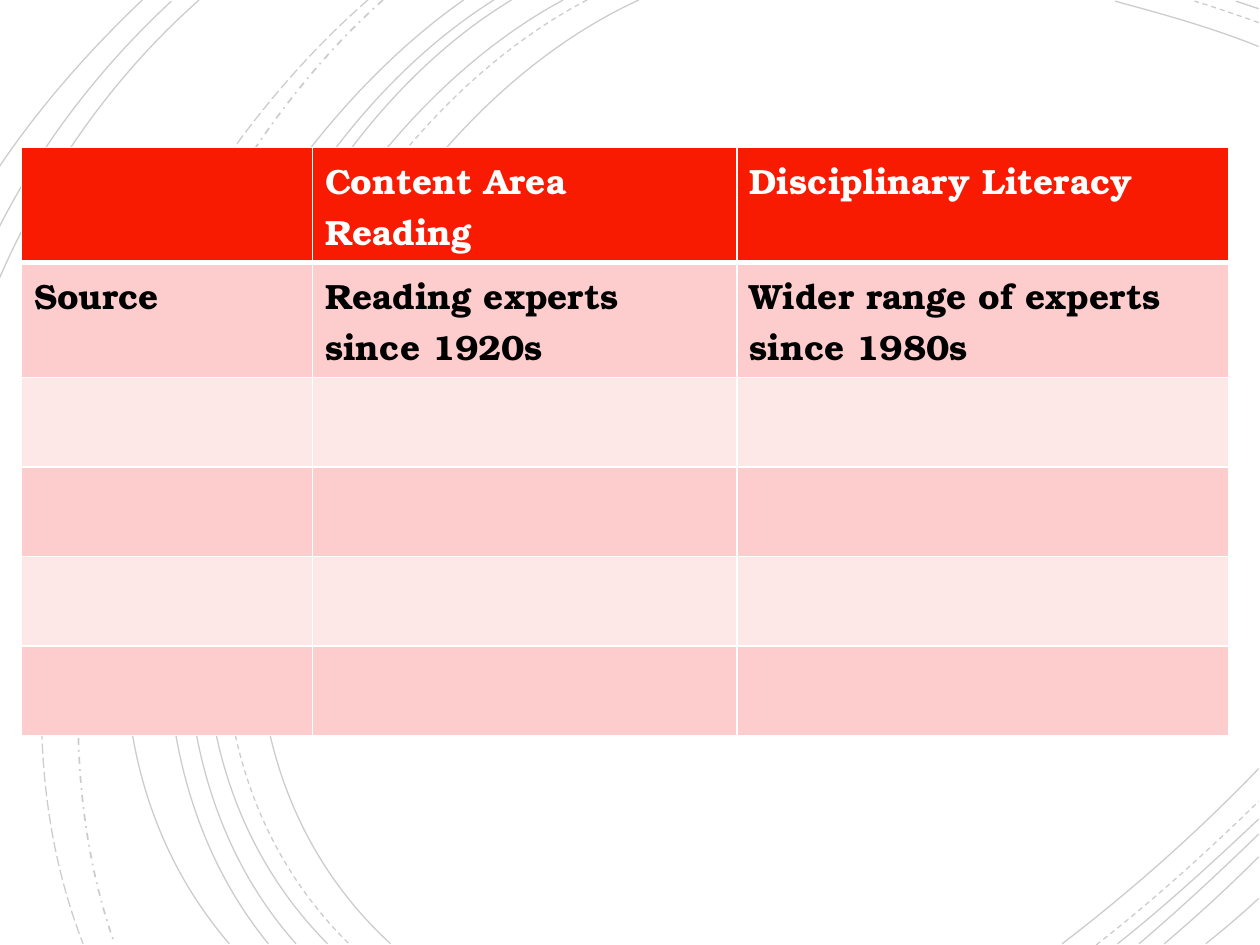
"""Build a literacy comparison table over a background of sweeping arcs."""
import lxml.etree
import pptx
import pptx.dml.color
import pptx.enum.dml
import pptx.oxml.ns
import pptx.util

THEME = {
    "font": "TeX Gyre Bonum", "size": 20,
    "header": "F81B02", "bands": ("FCCDCC", "FEE8E7"),
    "light": "FFFFFF", "dark": "000000",
    "arc_opacity": 20, "arc_width": 0.75, "border": 1, "header_border": 3,
}
SOLID = pptx.enum.dml.MSO_LINE.SOLID
DASH = pptx.enum.dml.MSO_LINE.DASH
DASH_DOT = pptx.enum.dml.MSO_LINE.DASH_DOT
LONG_DASH = pptx.enum.dml.MSO_LINE.LONG_DASH
ARCS = [
    (SOLID, (5.07, 0), (2.56, 1.15), (0.83, 5.4), (3.1, 7.49)),
    (SOLID, (9.99, 0.37), (9.62, 0.22), (9.22, 0.11), (8.85, 0.01)),
    (SOLID, (8.43, 7.49), (8.98, 7.07), (9.51, 6.6), (9.99, 6.1)),
    (DASH, (4.66, 0), (2.26, 1.25), (0.63, 5.38), (2.77, 7.49)),
    (DASH, (9.99, 0.18), (9.82, 0.12), (9.65, 0.06), (9.48, 0.01)),
    (DASH, (8.7, 7.5), (9.15, 7.15), (9.58, 6.76), (9.99, 6.36)),
    (SOLID, (4.47, 0), (2.11, 1.27), (0.5, 5.37), (2.6, 7.49)),
    (SOLID, (9.99, 0.07), (9.93, 0.05), (9.87, 0.03), (9.81, 0.01)),
    (SOLID, (8.87, 7.49), (9.26, 7.18), (9.63, 6.84), (9.99, 6.5)),
    (SOLID, (4.06, 0), (1.85, 1.33), (0.5, 5.41), (2.35, 7.49)),
    (SOLID, (9.04, 7.49), (9.37, 7.21), (9.68, 6.92), (9.99, 6.62)),
    (SOLID, (3.92, 0), (1.72, 1.38), (0.38, 5.34), (2.13, 7.49)),
    (SOLID, (9.24, 7.49), (9.5, 7.27), (9.75, 7.04), (9.99, 6.8)),
    (SOLID, (3.68, 0), (1.58, 1.47), (-0.07, 5.29), (1.82, 7.49)),
    (SOLID, (9.57, 7.49), (9.71, 7.38), (9.85, 7.26), (9.99, 7.13)),
    (DASH_DOT, (3.04, 0), (1.17, 1.66), (0.06, 5.09), (0.91, 7.49)),
    (LONG_DASH, (2.92, 0), (0.98, 1.69), (-0.31, 4.99), (0.66, 7.49)),
    (SOLID, (1.58, 0), (0.88, 0.62), (0.35, 1.39), (-0.01, 2.22)),
    (SOLID, (1.36, 0.01), (0.79, 0.54), (0.33, 1.14), (-0.01, 1.81)),
    (SOLID, (1.13, 0), (0.71, 0.4), (0.32, 0.84), (-0.01, 1.33)),
]
COLUMNS = (2.31, 3.37, 3.9)
ROW_COUNT, ROW_HEIGHT = 6, 0.71
WORDING = [
    ("", "Content Area Reading", "Disciplinary Literacy"),
    ("Source", "Reading experts since 1920s", "Wider range of experts since 1980s"),
]


def write_text(frame, text, *, size, color, font, bold=False):
    run = frame.paragraphs[0].add_run()
    run.text = text
    run.font.name = font
    run.font.size = pptx.util.Pt(size)
    run.font.bold = bold
    run.font.color.rgb = pptx.dml.color.RGBColor.from_string(color)


def add_border(cell, side, width):
    line = lxml.etree.SubElement(cell._tc.get_or_add_tcPr(), pptx.oxml.ns.qn(f"a:ln{side}"),
                                 w=str(pptx.util.Pt(width)))
    fill = lxml.etree.SubElement(line, pptx.oxml.ns.qn("a:solidFill"))
    lxml.etree.SubElement(fill, pptx.oxml.ns.qn("a:srgbClr"), val=THEME["light"])


presentation = pptx.Presentation()
presentation.slide_width = pptx.util.Inches(10)
presentation.slide_height = pptx.util.Inches(7.5)
unit = presentation.slide_width / 10
slide = presentation.slides.add_slide(presentation.slide_layouts[6])

for dash, *controls in ARCS:
    points = [(x * unit, y * unit) for x, y in controls]
    builder = slide.shapes.build_freeform(*points[0])
    builder.add_line_segments(points[1:], close=False)
    arc = builder.convert_to_shape()
    outline = arc._element.find(".//" + pptx.oxml.ns.qn("a:moveTo")).getparent()
    curve = lxml.etree.SubElement(outline, pptx.oxml.ns.qn("a:cubicBezTo"))
    for segment in outline.findall(pptx.oxml.ns.qn("a:lnTo")):
        curve.append(segment[0])
        outline.remove(segment)
    arc.shadow.inherit = False
    arc.fill.background()
    arc.line.width = pptx.util.Pt(1 if dash == DASH_DOT else THEME["arc_width"])
    arc.line.color.rgb = pptx.dml.color.RGBColor.from_string(THEME["dark"])
    arc.line.dash_style = dash
    color = arc.line._ln.find(".//" + pptx.oxml.ns.qn("a:srgbClr"))
    lxml.etree.SubElement(color, pptx.oxml.ns.qn("a:alpha"), val=str(THEME["arc_opacity"] * 1000))

table = slide.shapes.add_table(
    ROW_COUNT, len(COLUMNS), round(0.17 * unit), round(1.17 * unit),
    round(sum(COLUMNS) * unit), round(ROW_COUNT * ROW_HEIGHT * unit)).table
for column, width in zip(table.columns, COLUMNS):
    column.width = round(width * unit)

for row_index, row in enumerate(table.rows):
    row.height = round(ROW_HEIGHT * unit)
    is_header = row_index == 0
    wording = WORDING[row_index] if row_index < len(WORDING) else ("",) * len(COLUMNS)
    thick_side = {0: "B", 1: "T"}.get(row_index)
    for cell, text in zip(row.cells, wording):
        for side in "LRTB":
            add_border(cell, side, THEME["header_border" if side == thick_side else "border"])
        cell.fill.solid()
        cell.fill.fore_color.rgb = pptx.dml.color.RGBColor.from_string(
            THEME["header"] if is_header else THEME["bands"][(row_index - 1) % 2])
        if text:
            write_text(cell.text_frame, text, size=THEME["size"], font=THEME["font"],
                       color=THEME["light" if is_header else "dark"], bold=True)

presentation.save("out.pptx")
